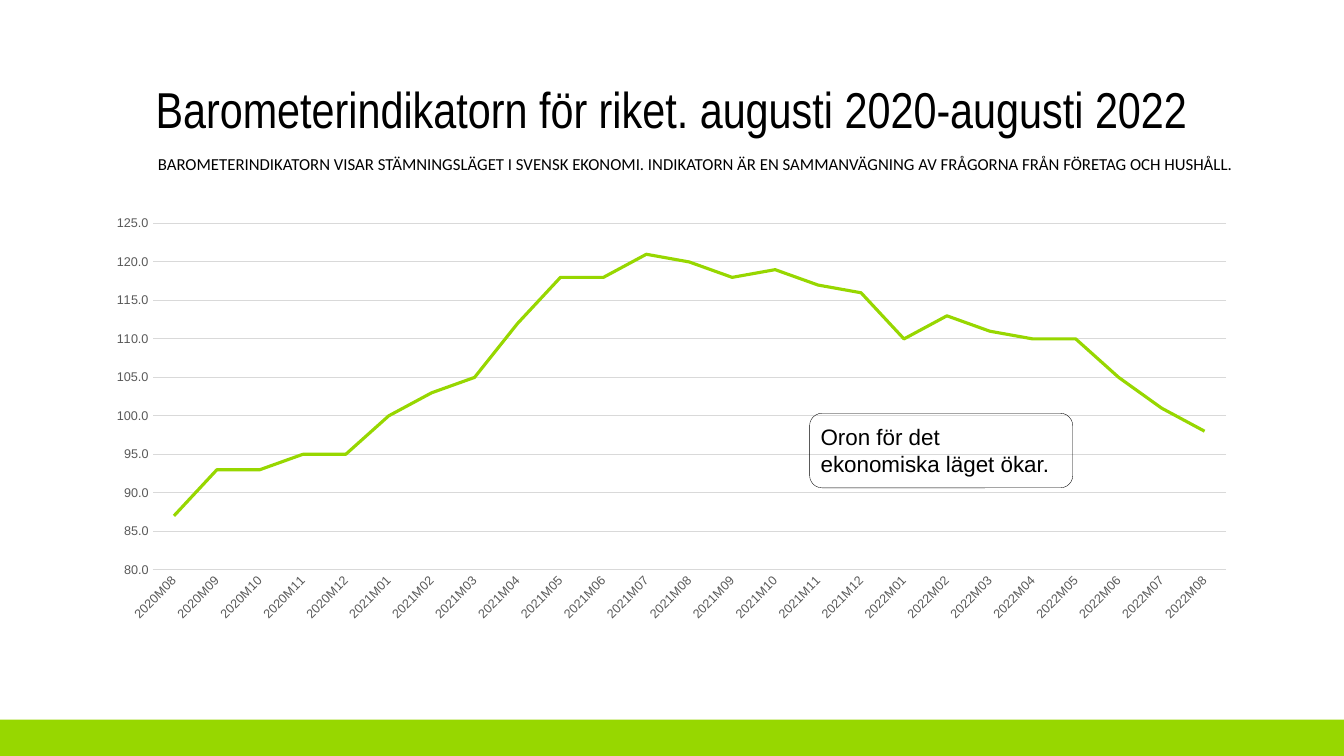
from lxml import etree
from pptx import Presentation
from pptx.chart.data import CategoryChartData
from pptx.dml.color import RGBColor
from pptx.enum import chart as ch, shapes, text
from pptx.util import Inches, Pt

TITLE = "Barometerindikatorn för riket. augusti 2020-augusti 2022"
INTRO = ("BAROMETERINDIKATORN VISAR STÄMNINGSLÄGET I SVENSK EKONOMI. "
         "INDIKATORN ÄR EN SAMMANVÄGNING AV FRÅGORNA FRÅN FÖRETAG OCH HUSHÅLL. ")
NOTE = "Oron för det ekonomiska läget ökar."
START = (2020, 8)
INDEX = [87, 93, 93, 95, 95, 100, 103, 105, 112, 118, 118, 121, 120,
         118, 119, 117, 116, 110, 113, 111, 110, 110, 105, 101, 98]
COLORS = {"green": "97D700", "black": "000000", "gray": "595959", "grid": "D9D9D9"}
PLOT = {"x": 0.05, "y": 0.04, "w": 0.93, "h": 0.82}
AUTO_TURN = "-60000000"


def color(name):
    return RGBColor.from_string(COLORS[name])


def style(font, face, size, tint):
    font.name, font.size, font.color.rgb = face, Pt(size), color(tint)


def place(shape, *box):
    shape.left, shape.top, shape.width, shape.height = map(Inches, box)


def write(shape, words, face, size, align, space=1.0):
    frame = shape.text_frame
    frame.word_wrap = True
    frame.auto_size = text.MSO_AUTO_SIZE.NONE
    frame.vertical_anchor = text.MSO_ANCHOR.TOP
    para = frame.paragraphs[0]
    para.alignment, para.line_spacing = align, space
    run = para.add_run()
    run.text = words
    style(run.font, face, size, "black")


def month(step):
    year, index = divmod(START[0] * 12 + START[1] - 1 + step, 12)
    return f"{year}M{index + 1:02d}"


def fix_plot(chart):
    """Pin the inner plot area to fractions of the chart frame."""
    area = chart.element.chart.plotArea
    ns = area.nsmap["c"]
    for old in area.findall(f"{{{ns}}}layout"):
        area.remove(old)
    layout = etree.Element(f"{{{ns}}}layout")
    manual = etree.SubElement(layout, f"{{{ns}}}manualLayout")
    parts = {"layoutTarget": "inner", "xMode": "edge", "yMode": "edge", **PLOT}
    for tag, val in parts.items():
        etree.SubElement(manual, f"{{{ns}}}{tag}").set("val", str(val))
    area.insert(0, layout)


def add_trend(slide):
    data = CategoryChartData(number_format="0.0")
    data.categories = [month(i) for i in range(len(INDEX))]
    data.add_series("Series 1", INDEX)
    box = map(Inches, (0.94, 2.05, 11.45, 4.19))
    chart = slide.shapes.add_chart(ch.XL_CHART_TYPE.LINE, *box, data).chart
    chart.has_legend = chart.has_title = False
    style(chart.font, "Arial", 10, "black")
    fix_plot(chart)

    months, scale = chart.category_axis, chart.value_axis
    for axis in (months, scale):
        axis.major_tick_mark = axis.minor_tick_mark = ch.XL_TICK_MARK.NONE
        style(axis.tick_labels.font, "Arial", 9, "gray")
    months._element.txPr.bodyPr.set("rot", AUTO_TURN)
    scale.minimum_scale, scale.maximum_scale, scale.major_unit = 80, 125, 5
    scale.tick_labels.number_format = "0.0"
    scale.tick_labels.number_format_is_linked = False
    scale.format.line.fill.background()
    for line in (months.format.line, scale.major_gridlines.format.line):
        line.color.rgb, line.width = color("grid"), Pt(0.75)

    chart.plots[0].vary_by_categories = False
    trend = chart.plots[0].series[0]
    trend.smooth = False
    trend.marker.style = ch.XL_MARKER_STYLE.NONE
    trend.format.line.color.rgb = color("green")
    trend.format.line.width = Pt(2.25)


def main():
    deck = Presentation()
    deck.slide_width, deck.slide_height = Inches(13.33), Inches(7.5)
    slide = deck.slides.add_slide(deck.slide_layouts[5])
    items = slide.shapes
    left, center = text.PP_ALIGN.LEFT, text.PP_ALIGN.CENTER

    band = items.add_shape(shapes.MSO_SHAPE.RECTANGLE, 0, Inches(7.14),
                           deck.slide_width, Inches(0.36))
    band.shadow.inherit = False
    band.fill.solid()
    band.fill.fore_color.rgb = color("green")
    band.line.fill.background()

    place(items.title, 0.94, 0.79, 11.44, 0.71)
    write(items.title, TITLE, "Arial Narrow", 36, center, 0.9)
    intro = items.add_textbox(*map(Inches, (0.94, 1.46, 11.96, 0.51)))
    write(intro, INTRO, "Calibri", 12, center, 1.1)

    add_trend(slide)

    note = items.add_textbox(*map(Inches, (8.04, 4.15, 2.55, 0.64)))
    write(note, NOTE, "Arial", 16, left)
    frame = items.add_shape(shapes.MSO_SHAPE.ROUNDED_RECTANGLE,
                            *map(Inches, (8.03, 4.1, 2.61, 0.74)))
    frame.shadow.inherit = False
    frame.fill.background()
    frame.line.color.rgb, frame.line.width = color("black"), Pt(0.25)

    deck.save("out.pptx")


if __name__ == "__main__":
    main()
